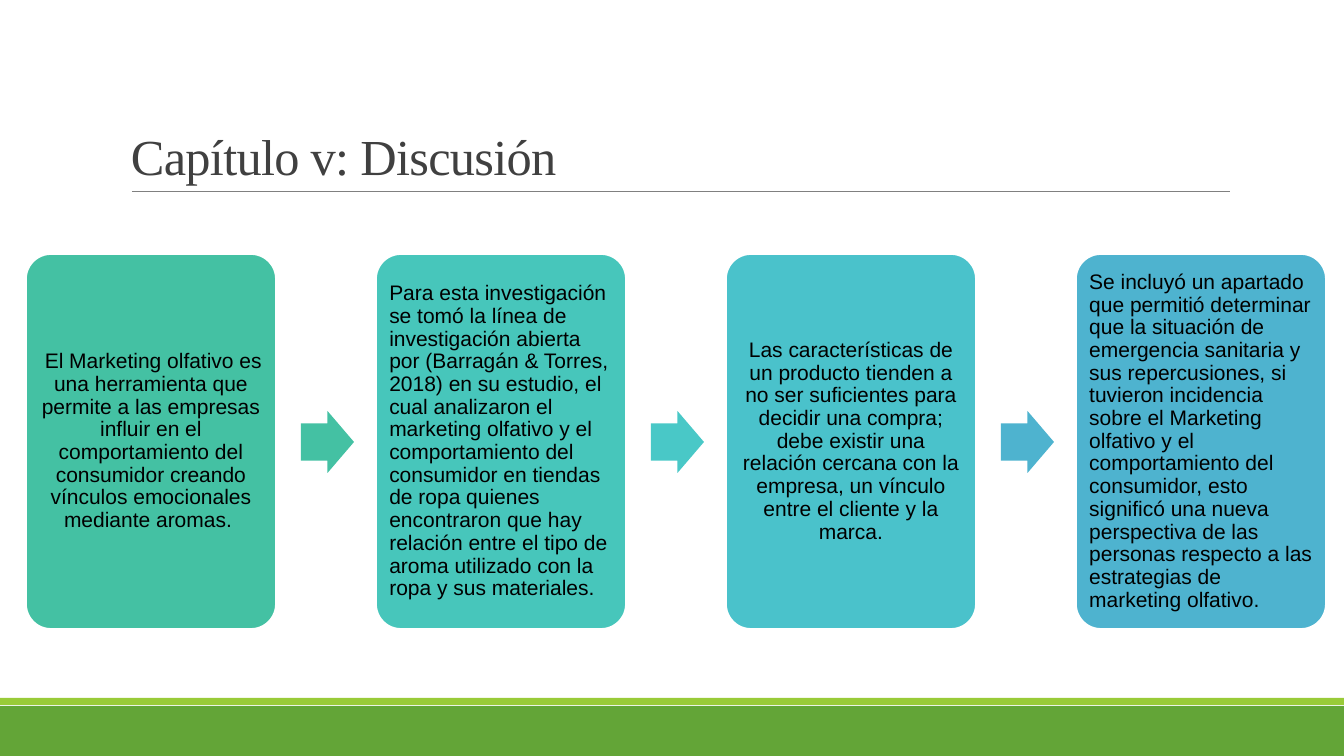
from dataclasses import dataclass

from lxml import etree
from pptx import Presentation
from pptx import util as u
from pptx.dml.color import RGBColor
from pptx.enum import shapes, text
from pptx.oxml.ns import qn

PX = 914400 / 100.8  # EMU in one px


def px(n):
    return u.Emu(round(n * PX))


@dataclass(frozen=True)
class Theme:
    white: str = "FFFFFF"
    ink: str = "000000"
    title: str = "404040"
    rule: str = "808080"
    band: str = "63A537"
    strip: str = "99CB38"
    cards: tuple = ("44C1A3", "47C6BB", "4AC2CB", "4EB3CF")
    arrows: tuple = ("44C1A3", "49C8C7", "4EB3CF")
    title_font: str = "Times New Roman"
    body_font: str = "Arial"
    space_font: str = "Calibri"
    title_size: int = 36
    body_size: int = 15


class Deck:
    def __init__(self, theme):
        self.theme = theme
        self.prs = Presentation()
        self.prs.slide_width, self.prs.slide_height = px(1344), px(756)
        self.s = self.prs.slides.add_slide(self.prs.slide_layouts[6])

    def shape(self, kind, x, y, w, h, fill, adj=(), line=None):
        sp = self.s.shapes.add_shape(kind, px(x), px(y), px(w), px(h))
        sp.shadow.inherit = False
        sp.fill.solid()
        sp.fill.fore_color.rgb = RGBColor.from_string(fill)
        for i, value in enumerate(adj):
            sp.adjustments[i] = value
        if line:
            sp.line.color.rgb = RGBColor.from_string(line)
            sp.line.width = u.Pt(1.25)
        else:
            sp.line.fill.background()
        return sp

    def rule(self, x1, x2, y):
        c = self.s.shapes.add_connector(
            shapes.MSO_CONNECTOR.STRAIGHT, px(x1), px(y), px(x2), px(y))
        c.line.color.rgb = RGBColor.from_string(self.theme.rule)
        c.line.width = u.Pt(0.5)
        etree.SubElement(c._element.spPr, qn("a:effectLst"))

    def title(self, words, x, y, w, h):
        t = self.theme
        tf = self.s.shapes.add_textbox(px(x), px(y), px(w), px(h)).text_frame
        tf.word_wrap = True
        tf.vertical_anchor = text.MSO_ANCHOR.BOTTOM
        tf.text = words
        p = tf.paragraphs[0]
        p.line_spacing = 0.85
        r = p.runs[0]
        self.font(r, t.title_font, t.title_size, t.title)
        r.font._element.set("spc", "-50")

    def card(self, x, y, w, h, fill, align, parts):
        t = self.theme
        sp = self.shape(shapes.MSO_SHAPE.ROUNDED_RECTANGLE, x, y, w, h,
                        fill, (0.1,), t.white)
        tf = sp.text_frame
        tf.word_wrap = True
        tf.vertical_anchor = text.MSO_ANCHOR.MIDDLE
        tf.margin_left = tf.margin_right = tf.margin_top = tf.margin_bottom = px(6)
        p = tf.paragraphs[0]
        p.alignment = align
        p.line_spacing = 0.9
        for part in parts:
            r = p.add_run()
            r.text = part
            name = t.space_font if part.isspace() else t.body_font
            self.font(r, name, t.body_size, t.ink)

    def font(self, r, name, size, color):
        r.font.name = name
        r.font.size = u.Pt(size)
        r.font.color.rgb = RGBColor.from_string(color)


CENTER, LEFT = text.PP_ALIGN.CENTER, text.PP_ALIGN.LEFT
STEPS = [
    (CENTER, [" ", "El Marketing olfativo es una herramienta que permite a las "
              "empresas influir en el comportamiento del consumidor creando "
              "vínculos emocionales mediante aromas. "]),
    (LEFT, ["Para esta investigación se tomó la línea de investigación abierta "
            "por (Barragán & Torres, 2018) en su estudio, el cual analizaron el "
            "marketing olfativo y el comportamiento del consumidor en "
            "tiendas de ropa quienes encontraron que hay relación entre el tipo "
            "de aroma utilizado con la ropa y sus materiales."]),
    (CENTER, ["Las características de un producto tienden a no ser suficientes "
              "para decidir una compra; debe existir una relación cercana con la "
              "empresa, un vínculo entre el cliente y la marca."]),
    (LEFT, ["Se incluyó un apartado que permitió determinar que la situación de "
            "emergencia sanitaria y sus repercusiones, si tuvieron incidencia "
            "sobre el Marketing olfativo y el comportamiento del consumidor, esto "
            "significó una nueva perspectiva de las personas respecto a las "
            "estrategias de marketing olfativo. "]),
]


def main():
    theme = Theme()
    deck = Deck(theme)

    # Footer bands
    deck.shape(shapes.MSO_SHAPE.RECTANGLE, 0, 706, 1344, 50, theme.band)
    deck.shape(shapes.MSO_SHAPE.RECTANGLE, 0, 698, 1344, 7, theme.strip)

    # Title and rule
    deck.rule(132, 1230, 191)
    deck.title("Capítulo v: Discusión", 121, 31, 1109, 160)

    # Process: cards joined by arrows
    left, pitch = 26, 350
    for i, (align, parts) in enumerate(STEPS):
        x = left + i * pitch
        deck.card(x, 254, 250, 375, theme.cards[i], align, parts)
        if i < len(theme.arrows):
            deck.shape(shapes.MSO_SHAPE.RIGHT_ARROW, x + 275, 411, 53, 62,
                       theme.arrows[i], (0.6, 0.5))

    deck.prs.save("out.pptx")


if __name__ == "__main__":
    main()
